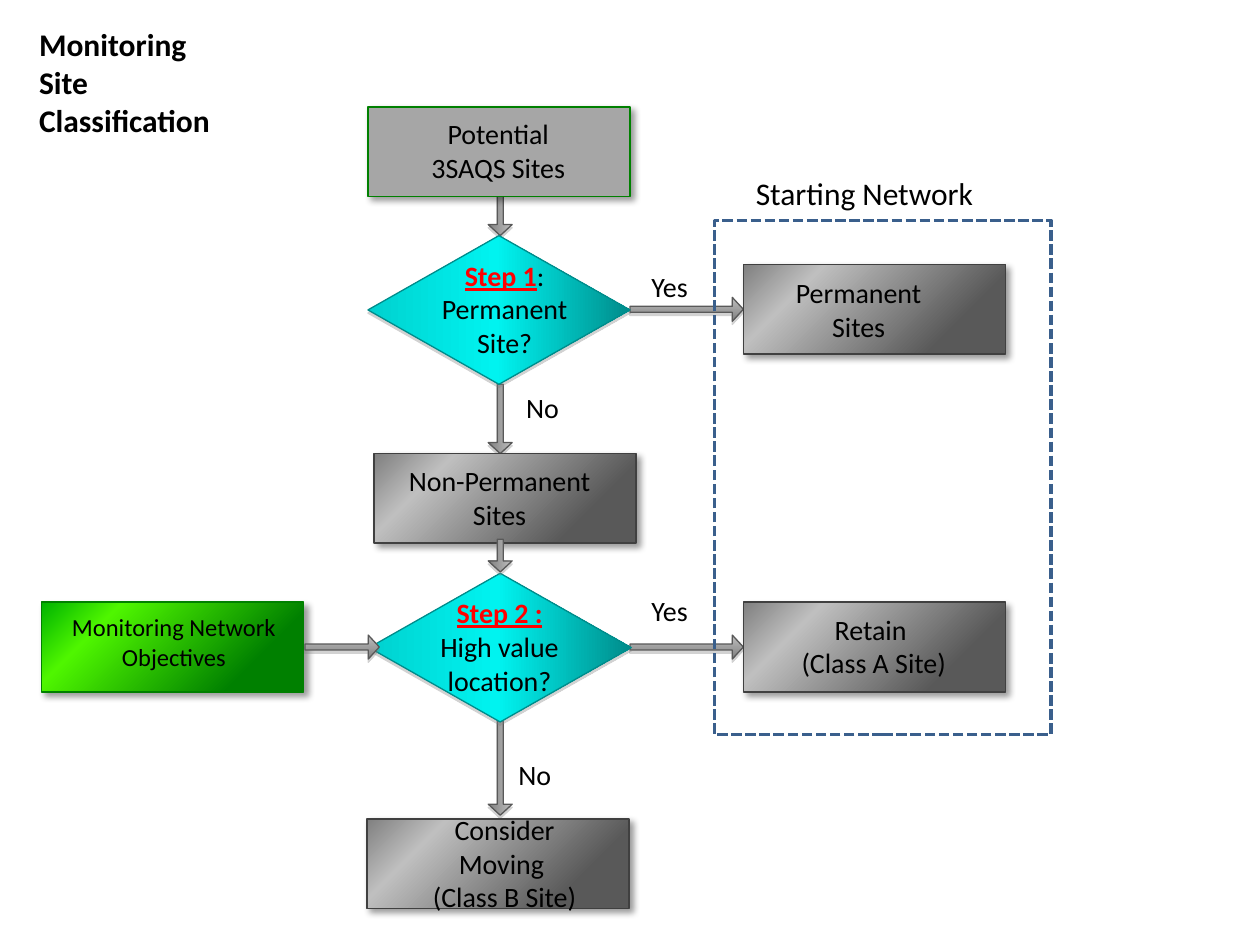
from dataclasses import dataclass

from lxml import etree
from pptx import Presentation
from pptx import util as u
from pptx.dml.color import RGBColor
from pptx.enum import dml, shapes, text
from pptx.oxml.ns import qn

PX = 9144  # EMU per px, 100 px to the inch
FONT = "Calibri"

BLACK = RGBColor(0x00, 0x00, 0x00)
RED = RGBColor(0xFF, 0x00, 0x00)
GREEN = RGBColor(0x00, 0x80, 0x00)
LIME = RGBColor(0x4F, 0xF6, 0x00)
MID_GREEN = RGBColor(0x00, 0xB3, 0x00)
TEAL = RGBColor(0x00, 0x8C, 0x8B)
CYAN = RGBColor(0x00, 0xF3, 0xF0)
DEEP_CYAN = RGBColor(0x00, 0xD1, 0xCF)
NAVY = RGBColor(0x3A, 0x5F, 0x8C)
CHARCOAL = RGBColor(0x40, 0x40, 0x40)
DARK_GRAY = RGBColor(0x59, 0x59, 0x59)
ARROW_GRAY = RGBColor(0x7F, 0x7F, 0x7F)
GRAY = RGBColor(0x80, 0x80, 0x80)
FLAT_GRAY = RGBColor(0xA6, 0xA6, 0xA6)
LIGHT_GRAY = RGBColor(0xBF, 0xBF, 0xBF)


@dataclass(frozen=True)
class Shadow:
    color: RGBColor
    opacity: int
    blur: float
    distance: float
    angle: int


@dataclass(frozen=True)
class Style:
    stops: tuple[tuple[int, RGBColor], ...]  # a single stop is a solid fill
    angle: int
    line: RGBColor
    line_width: float
    shadow: Shadow


@dataclass(frozen=True)
class Block:
    left: int
    top: int
    style: Style


@dataclass(frozen=True)
class Arrow:
    x: int  # tail: left edge, or centre line when pointing down
    y: int  # tail: top edge
    length: int
    down: bool = False


@dataclass(frozen=True)
class Span:
    words: str
    color: RGBColor = BLACK
    strong: bool = False


@dataclass(frozen=True)
class Label:
    left: int
    top: int
    width: int
    height: int
    lines: tuple[tuple[Span, ...], ...]
    size: int = 16
    align: text.PP_ALIGN = text.PP_ALIGN.CENTER


SOFT = Shadow(BLACK, 40, 4, 3, 45)
HARD = Shadow(GRAY, 35, 0, 1.8, 90)
SITE = Style(((22, DARK_GRAY), (77, LIGHT_GRAY), (100, GRAY)), 225, CHARCOAL, 1, SOFT)
GOAL = Style(((22, GREEN), (77, LIME), (100, MID_GREEN)), 225, GREEN, 1, SOFT)
START = Style(((0, FLAT_GRAY),), 0, GREEN, 1, SOFT)
STEP = Style(((0, DEEP_CYAN), (49, CYAN), (100, TEAL)), 0, TEAL, 0.75, HARD)
FLOW = Style(((0, LIGHT_GRAY), (100, ARROW_GRAY)), 90, DARK_GRAY, 0.75, HARD)

BLOCK_WIDTH, BOX_HEIGHT, DIAMOND_HEIGHT, ARROW_HEIGHT = 208, 71, 118, 19
SPINE = 397  # centre line of the main flow
STEP_1_ROW, STEP_2_ROW = 236, 504

BACK_ARROWS = [
    Arrow(500, STEP_2_ROW, 90),
    Arrow(SPINE, 572, 75, down=True),
    Arrow(SPINE, 305, 55, down=True),
    Arrow(SPINE, 150, 37, down=True),
    Arrow(500, STEP_1_ROW, 90),
]
FRONT_ARROWS = [Arrow(SPINE, 428, 26, down=True), Arrow(242, STEP_2_ROW, 59)]

BLOCKS = [
    Block(291, 650, SITE),
    Block(292, 187, STEP),
    Block(293, 455, STEP),
    Block(590, 210, SITE),
    Block(590, 478, SITE),
    Block(292, 85, START),
    Block(297, 360, SITE),
    Block(33, 478, GOAL),
]


def plain(*lines: str) -> tuple[tuple[Span, ...], ...]:
    return tuple((Span(line),) for line in lines)


LABELS = [
    Label(404, 305, 53, 37, plain("No")),
    Label(398, 596, 53, 37, plain("No")),
    Label(505, 209, 53, 37, plain("Yes")),
    Label(505, 466, 53, 37, plain("Yes")),
    Label(603, 214, 157, 64, plain("Permanent Sites")),
    Label(615, 481, 157, 64, plain("Retain ", "(Class A Site)")),
    Label(317, 88, 157, 64, plain("Potential 3SAQS Sites")),
    Label(322, 200, 157, 91,
          ((Span("Step 1", RED, True), Span(":")), (Span("Permanent Site?"),))),
    Label(318, 468, 157, 91,
          ((Span("Step 2 :", RED, True),), (Span("High value location?"),))),
    Label(301, 363, 191, 64, plain("Non-Permanent Sites")),
    Label(322, 640, 157, 91, plain("Consider Moving ", "(Class B Site)")),
    Label(42, 481, 192, 57, plain("Monitoring Network Objectives"), 14),
    Label(590, 133, 219, 40, plain("Starting Network"), 18, text.PP_ALIGN.LEFT),
]


def px(*lengths: float) -> list[int]:
    return [round(length * PX) for length in lengths]


def add_color(parent, color: RGBColor):
    return etree.SubElement(parent, qn("a:srgbClr"), val=str(color))


def apply_style(shape, style: Style) -> None:
    shape.line.color.rgb = style.line
    shape.line.width = u.Pt(style.line_width)
    properties = shape._element.spPr
    if len(style.stops) == 1:
        shape.fill.solid()
        shape.fill.fore_color.rgb = style.stops[0][1]
    else:
        shape.fill.gradient()
        gradient = properties.find(qn("a:gradFill"))
        for child in list(gradient):
            gradient.remove(child)
        stop_list = etree.SubElement(gradient, qn("a:gsLst"))
        for position, color in style.stops:
            add_color(etree.SubElement(stop_list, qn("a:gs"), pos=str(position * 1000)), color)
        etree.SubElement(gradient, qn("a:lin"), ang=str(style.angle * 60000), scaled="0")

    # Outer shadow goes into the empty effect list
    shape.shadow.inherit = False
    shadow = style.shadow
    outer = etree.SubElement(
        properties.find(qn("a:effectLst")), qn("a:outerShdw"),
        blurRad=str(u.Pt(shadow.blur)), dist=str(u.Pt(shadow.distance)),
        dir=str(shadow.angle * 60000), algn="ctr", rotWithShape="0")
    etree.SubElement(add_color(outer, shadow.color), qn("a:alpha"), val=str(shadow.opacity * 1000))


def draw_arrow(page, arrow: Arrow) -> None:
    left, top = arrow.x, arrow.y
    if arrow.down:
        left -= arrow.length / 2
        top += (arrow.length - ARROW_HEIGHT) / 2
    shape = page.shapes.add_shape(
        shapes.MSO_SHAPE.RIGHT_ARROW, *px(left, top, arrow.length, ARROW_HEIGHT))
    shape.adjustments[0], shape.adjustments[1] = 0.25, 0.46
    shape.rotation = 90 if arrow.down else 0
    apply_style(shape, FLOW)


def draw_block(page, block: Block) -> None:
    kind, height = shapes.MSO_SHAPE.RECTANGLE, BOX_HEIGHT
    if block.style is STEP:
        kind, height = shapes.MSO_SHAPE.DIAMOND, DIAMOND_HEIGHT
    shape = page.shapes.add_shape(kind, *px(block.left, block.top, BLOCK_WIDTH, height))
    apply_style(shape, block.style)


def add_span(para, words: str, size: int, color: RGBColor, bold: bool, underline: bool) -> None:
    span = para.add_run()
    span.text = words
    span.font.name, span.font.size = FONT, u.Pt(size)
    span.font.bold, span.font.underline = bold, underline
    span.font.color.rgb = color


def draw_label(page, label: Label) -> None:
    box = page.shapes.add_textbox(*px(label.left, label.top, label.width, label.height))
    frame = box.text_frame
    frame.word_wrap = True
    for index, line in enumerate(label.lines):
        para = frame.add_paragraph() if index else frame.paragraphs[0]
        para.alignment = label.align
        for span in line:
            add_span(para, span.words, label.size, span.color, span.strong, span.strong)


def draw_title(page) -> None:
    title = page.shapes.title
    title.left, title.top, title.width, title.height = px(21, 15, 164, 101)
    frame = title.text_frame
    frame.word_wrap = True
    frame.auto_size = text.MSO_AUTO_SIZE.NONE
    frame.vertical_anchor = text.MSO_ANCHOR.TOP
    para = frame.paragraphs[0]
    para.alignment = text.PP_ALIGN.LEFT
    add_span(para, "Monitoring Site Classification", 18, BLACK, True, False)


def draw_network_frame(page) -> None:
    frame = page.shapes.add_shape(shapes.MSO_SHAPE.RECTANGLE, *px(567, 175, 267, 408))
    frame.shadow.inherit = False
    frame.fill.background()
    frame.line.color.rgb = NAVY
    frame.line.width = u.Pt(2)
    frame.line.dash_style = dml.MSO_LINE.SQUARE_DOT


def main() -> None:
    deck = Presentation()
    deck.slide_width, deck.slide_height = px(1000, 750)
    page = deck.slides.add_slide(deck.slide_layouts[5])  # title only
    draw_title(page)
    # Flow chart, from back to front
    for arrow in BACK_ARROWS:
        draw_arrow(page, arrow)
    for block in BLOCKS:
        draw_block(page, block)
    for label in LABELS:
        draw_label(page, label)
    for arrow in FRONT_ARROWS:
        draw_arrow(page, arrow)
    draw_network_frame(page)
    deck.save("out.pptx")


if __name__ == "__main__":
    main()
